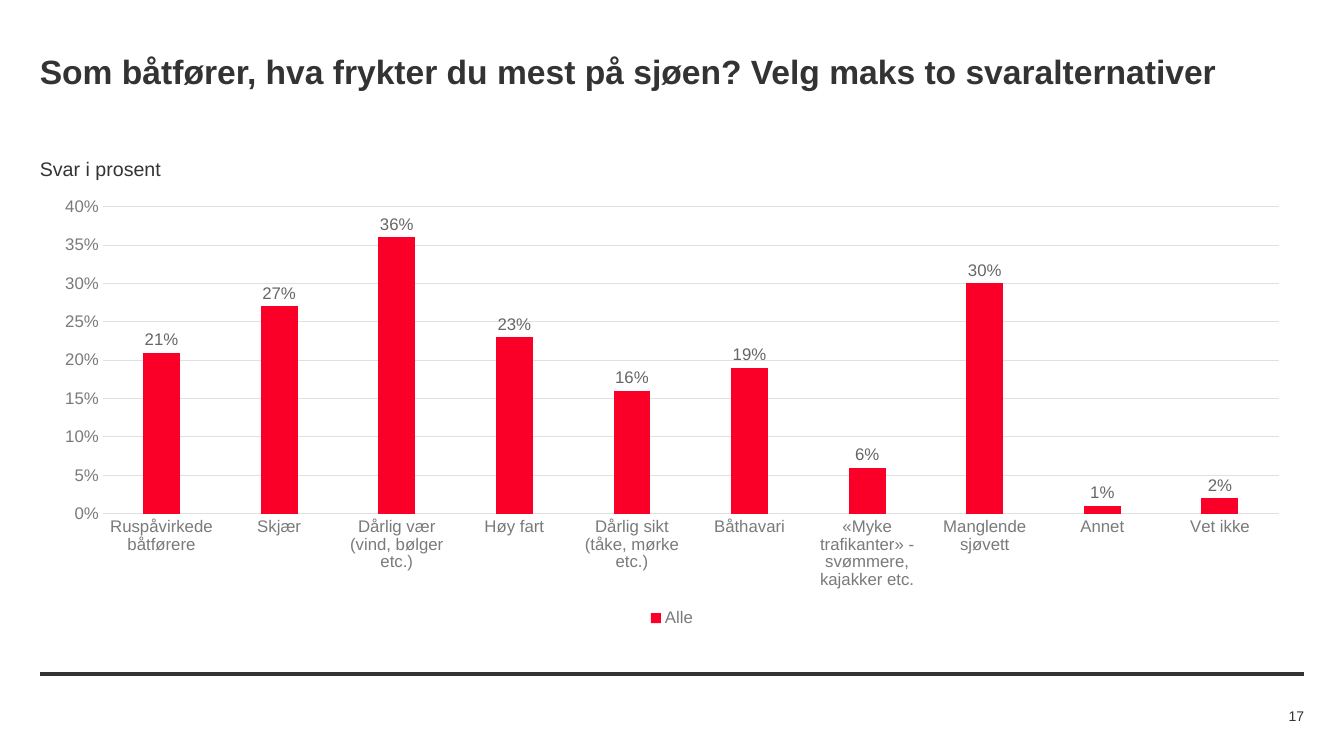
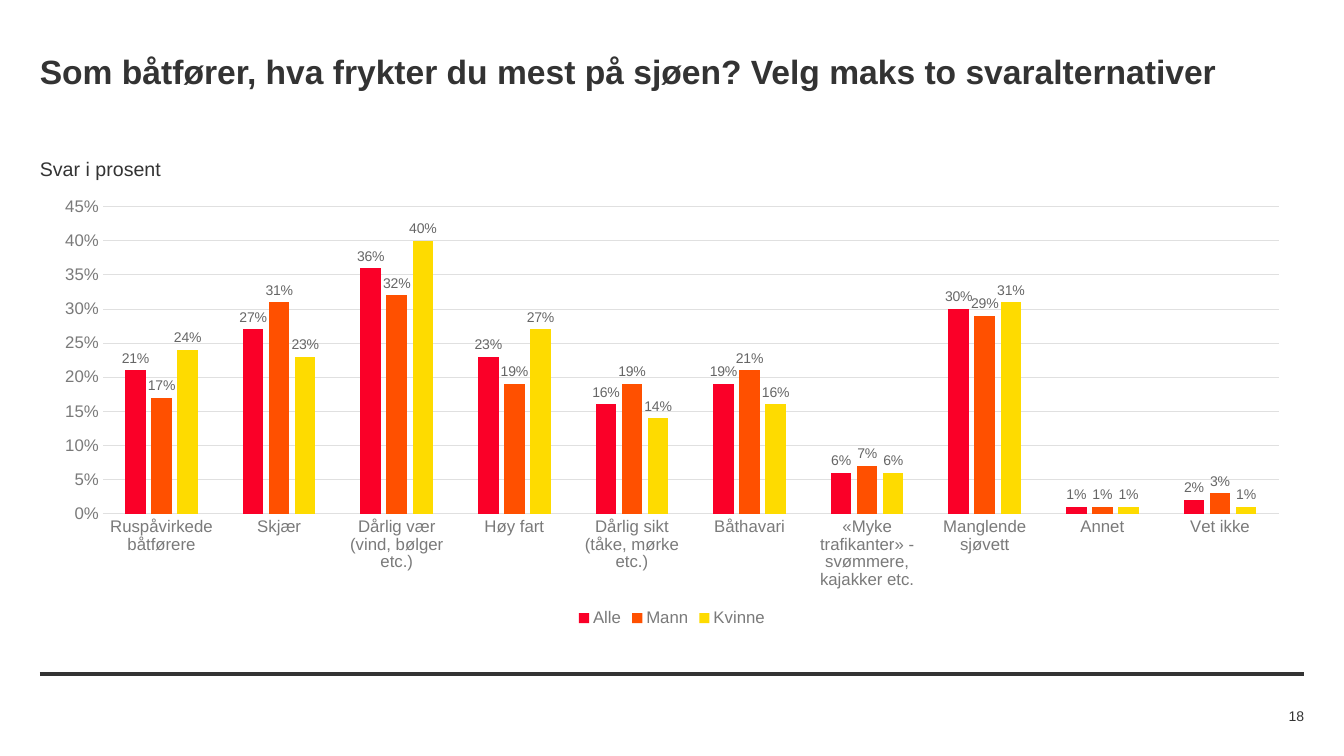
"""Build two survey slides with clustered column charts."""
from lxml.etree import SubElement
from pptx import Presentation
from pptx.chart.data import CategoryChartData
from pptx.dml.color import RGBColor
from pptx.enum.chart import XL_CHART_TYPE, XL_LABEL_POSITION, XL_LEGEND_POSITION, XL_TICK_MARK
from pptx.enum.shapes import MSO_CONNECTOR
from pptx.enum.text import MSO_ANCHOR, PP_ALIGN
from pptx.oxml.ns import qn
from pptx.util import Pt

SCALE = 9525
LEFT, RIGHT = 38, 1242
WIDTH = RIGHT - LEFT
FONT = "Arial"
COLORS = {
    "text": "333333", "axis": "7A7A7A", "label": "666666", "grid": "E0E0E0",
    "Alle": "FA0028", "Mann": "FF5000", "Kvinne": "FEDB00",
}
TITLE = "Som båtfører, hva frykter du mest på sjøen? Velg maks to svaralternativer"
ANSWERS = {
    "Ruspåvirkede båtførere": (0.21, 0.17, 0.24),
    "Skjær": (0.27, 0.31, 0.23),
    "Dårlig vær (vind, bølger etc.)": (0.36, 0.32, 0.40),
    "Høy fart": (0.23, 0.19, 0.27),
    "Dårlig sikt (tåke, mørke etc.)": (0.16, 0.19, 0.14),
    "Båthavari": (0.19, 0.21, 0.16),
    "«Myke trafikanter» - svømmere, kajakker etc.": (0.06, 0.07, 0.06),
    "Manglende sjøvett": (0.30, 0.29, 0.31),
    "Annet": (0.01, 0.01, 0.01),
    "Vet ikke": (0.02, 0.03, 0.01),
}
GROUPS = dict(zip(("Alle", "Mann", "Kvinne"), zip(*ANSWERS.values())))


def px(*lengths):
    return [length * SCALE for length in lengths]


def color(name):
    return RGBColor.from_string(COLORS[name])


def style_font(font, size, name, bold=False):
    font.name, font.size, font.bold = FONT, Pt(size), bold
    font.color.rgb = color(name)


def style_line(line, name, width):
    line.color.rgb = color(name)
    line.width = Pt(width)


class Deck:
    def __init__(self):
        self.file = Presentation()
        self.file.slide_width, self.file.slide_height = px(1280, 720)

    def add_page(self, number):
        self.page = self.file.slides.add_slide(self.file.slide_layouts[6])
        self.rule(642)
        self.text(TITLE, LEFT, 48, WIDTH, 42, 24, bold=True)
        self.text("Svar i prosent", LEFT, 149, 117, 23, 14)
        self.text(str(number), 1140, 671, RIGHT - 1140, 21, 10,
                  align=PP_ALIGN.RIGHT, anchor=MSO_ANCHOR.MIDDLE)

    def rule(self, y):
        rule = self.page.shapes.add_connector(MSO_CONNECTOR.STRAIGHT, *px(LEFT, y, RIGHT, y))
        style_line(rule.line, "text", 3)
        SubElement(rule._element.spPr, qn("a:effectLst"))

    def text(self, words, x, y, width, height, size, bold=False,
             align=PP_ALIGN.LEFT, anchor=MSO_ANCHOR.TOP):
        frame = self.page.shapes.add_textbox(*px(x, y, width, height)).text_frame
        frame.margin_left = frame.margin_top = frame.margin_right = frame.margin_bottom = 0
        frame.word_wrap, frame.vertical_anchor = True, anchor
        para = frame.paragraphs[0]
        para.text, para.alignment = words, align
        style_font(para.font, size, "text", bold)

    def columns(self, names, top, label_size):
        data = CategoryChartData(number_format="0%")
        data.categories = list(ANSWERS)
        for name in names:
            data.add_series(name, GROUPS[name])
        chart = self.page.shapes.add_chart(
            XL_CHART_TYPE.COLUMN_CLUSTERED, *px(LEFT, 180, WIDTH, 421), data).chart
        style_font(chart.font, 10, "text")
        chart.has_title = False
        chart.has_legend = True
        chart.legend.position = XL_LEGEND_POSITION.BOTTOM
        chart.legend.include_in_layout = False
        style_font(chart.legend.font, 12, "axis")
        self.axes(chart, top)
        plot = chart.plots[0]
        plot.gap_width, plot.overlap, plot.vary_by_categories = 219, -27, False
        for series in plot.series:
            series.format.fill.solid()
            series.format.fill.fore_color.rgb = color(series.name)
            labels = series.data_labels
            labels.show_value = True
            labels.position = XL_LABEL_POSITION.OUTSIDE_END
            labels.number_format, labels.number_format_is_linked = "0%", False
            style_font(labels.font, label_size, "label")

    def axes(self, chart, top):
        for axis in (chart.category_axis, chart.value_axis):
            axis.major_tick_mark = axis.minor_tick_mark = XL_TICK_MARK.NONE
            style_font(axis.tick_labels.font, 12, "axis")
        style_line(chart.category_axis.format.line, "grid", 0.75)
        values = chart.value_axis
        values.minimum_scale, values.maximum_scale, values.major_unit = 0, top, 0.05
        values.format.line.fill.background()
        style_line(values.major_gridlines.format.line, "grid", 0.75)
        values.tick_labels.number_format = "0%"
        values.tick_labels.number_format_is_linked = False


def main():
    deck = Deck()
    deck.add_page(17)
    deck.columns(["Alle"], top=0.4, label_size=12)
    deck.add_page(18)
    deck.columns(list(GROUPS), top=0.45, label_size=10)
    deck.file.save("out.pptx")


if __name__ == "__main__":
    main()
